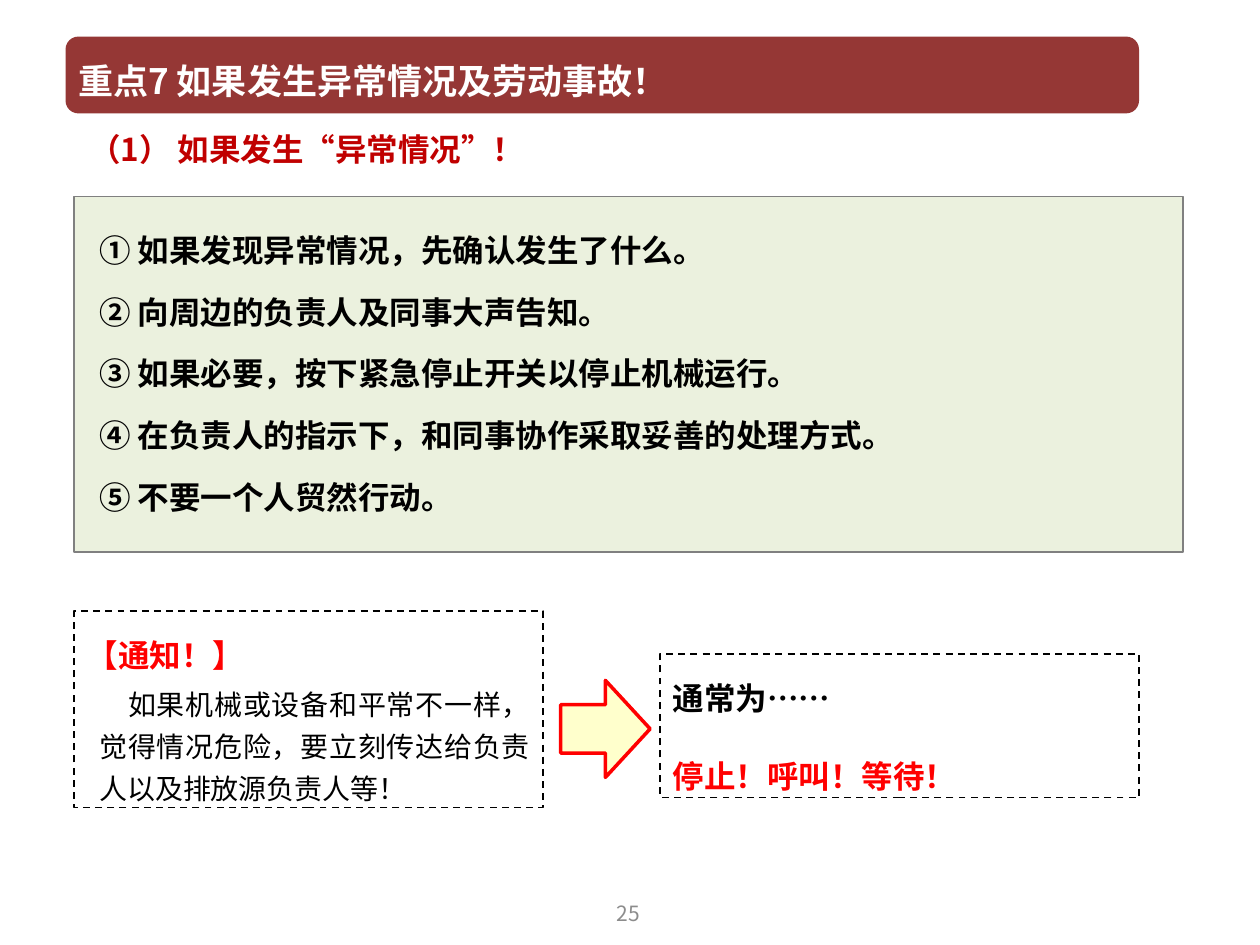
"""Build a safety slide on what to do when something abnormal happens."""
from dataclasses import dataclass
from typing import Optional

from lxml import etree
from pptx import Presentation
from pptx.dml.color import RGBColor
from pptx.enum.dml import MSO_LINE
from pptx.enum.shapes import MSO_SHAPE
from pptx.enum.text import MSO_ANCHOR, MSO_AUTO_SIZE, PP_ALIGN
from pptx.oxml.ns import qn
from pptx.util import Inches, Pt

RECT, ROUND, ARROW = MSO_SHAPE.RECTANGLE, MSO_SHAPE.ROUNDED_RECTANGLE, MSO_SHAPE.RIGHT_ARROW
TOP, MIDDLE = MSO_ANCHOR.TOP, MSO_ANCHOR.MIDDLE
LEFT, CENTER, JUSTIFY = PP_ALIGN.LEFT, PP_ALIGN.CENTER, PP_ALIGN.JUSTIFY
NO_FIT, GROW = MSO_AUTO_SIZE.NONE, MSO_AUTO_SIZE.SHAPE_TO_FIT_TEXT
DASH = MSO_LINE.DASH
FONT = "Noto Sans CJK SC"
TITLE_ONLY = 5
COLORS = {
    "black": "000000", "white": "FFFFFF", "gray": "808080", "number": "8C8C8C",
    "maroon": "953735", "crimson": "C00000", "red": "FF0000",
    "green": "EBF1DE", "yellow": "FFFFCC",
}


@dataclass(frozen=True)
class Box:
    left: float
    top: float
    width: float
    height: float

    def lengths(self) -> list:
        return [Inches(v) for v in (self.left, self.top, self.width, self.height)]


@dataclass(frozen=True)
class Para:
    text: str
    color: str = "black"
    size: float = 18
    bold: bool = True
    align: PP_ALIGN = JUSTIFY
    spacing: float = 1.5
    before: float = 0
    indent: float = 0


STEPS = [
    "① 如果发现异常情况，先确认发生了什么。",
    "② 向周边的负责人及同事大声告知。",
    "③ 如果必要，按下紧急停止开关以停止机械运行。",
    "④ 在负责人的指示下，和同事协作采取妥善的处理方式。",
    "⑤ 不要一个人贸然行动。",
]
NOTICE = [
    Para("【通知！】", "red", before=12),
    Para("\u3000如果机械或设备和平常不一样，觉得情况危险，要立刻传达给负责人以及排放源负责人等！".replace("\u3000", "　"),
         size=16, bold=False, spacing=1.25, before=3, indent=0.1),
]
RULE = [Para("通常为……", before=12), Para("停止！呼叫！等待！", "red", before=12)]


def rgb(name: str) -> RGBColor:
    return RGBColor.from_string(COLORS[name])


def write(s, paras: list[Para], anchor=TOP, fit=NO_FIT, insets=(0.1, 0.05, 0.1, 0.05)) -> None:
    tf = s.text_frame
    tf.word_wrap, tf.auto_size, tf.vertical_anchor = True, fit, anchor
    tf.margin_left, tf.margin_top, tf.margin_right, tf.margin_bottom = map(Inches, insets)
    for i, para in enumerate(paras):
        p = tf.add_paragraph() if i else tf.paragraphs[0]
        p.alignment, p.line_spacing, p.space_before = para.align, para.spacing, Pt(para.before)
        pPr = p._p.get_or_add_pPr()
        pPr.set("marL", str(Inches(para.indent)))
        pPr.set("indent", "0")
        r = p.add_run()
        r.text = para.text
        r.font.name, r.font.size, r.font.bold = FONT, Pt(para.size), para.bold
        r.font.color.rgb = rgb(para.color)
        etree.SubElement(r._r.get_or_add_rPr(), qn("a:ea")).set("typeface", FONT)


def add_panel(slide, kind, box: Box, fill: Optional[str] = None, line: Optional[str] = None,
              width: float = 1, dash: Optional[MSO_LINE] = None):
    s = slide.shapes.add_shape(kind, *box.lengths())
    s.shadow.inherit = False
    if fill:
        s.fill.solid()
        s.fill.fore_color.rgb = rgb(fill)
    else:
        s.fill.background()
    if line:
        s.line.color.rgb = rgb(line)
        s.line.width = Pt(width)
        if dash:
            s.line.dash_style = dash
    else:
        s.line.fill.background()
    return s


def add_label(slide, box: Box, para: Para, anchor=TOP, fit=NO_FIT) -> None:
    write(slide.shapes.add_textbox(*box.lengths()), [para], anchor, fit)


def add_title(slide, box: Box, para: Para) -> None:
    add_panel(slide, ROUND, box, "maroon")
    s = slide.shapes.title
    s.left, s.top, s.width, s.height = box.lengths()
    write(s, [para], MIDDLE)
    slide.shapes._spTree.append(s._element)


def main() -> None:
    prs = Presentation()
    prs.slide_width, prs.slide_height = Inches(10), Inches(7.5)
    slide = prs.slides.add_slide(prs.slide_layouts[TITLE_ONLY])

    s = add_panel(slide, RECT, Box(0.59, 1.56, 8.8, 2.82), "green", "gray")
    write(s, [Para(t, before=3, indent=0.1) for t in STEPS], insets=(0.1, 0.12, 0.08, 0.05))

    add_title(slide, Box(0.52, 0.29, 8.52, 0.61),
              Para("重点7 如果发生异常情况及劳动事故！", "white", 20, spacing=1.25))
    add_label(slide, Box(0.61, 0.98, 5.02, 0.4),
              Para("（1） 如果发生“异常情况”！", "crimson", align=LEFT, spacing=1.0), fit=GROW)

    for box, paras in ((Box(0.59, 4.85, 3.72, 1.56), NOTICE), (Box(5.24, 5.19, 3.8, 1.14), RULE)):
        write(add_panel(slide, RECT, box, line="black", dash=DASH), paras, fit=GROW)
    add_panel(slide, ARROW, Box(4.45, 5.4, 0.71, 0.77), "yellow", "red", 2)

    add_label(slide, Box(3.82, 7.05, 2.33, 0.4),
              Para("25", "number", 12, False, CENTER, 1.0), MIDDLE)
    prs.save("out.pptx")


if __name__ == "__main__":
    main()
